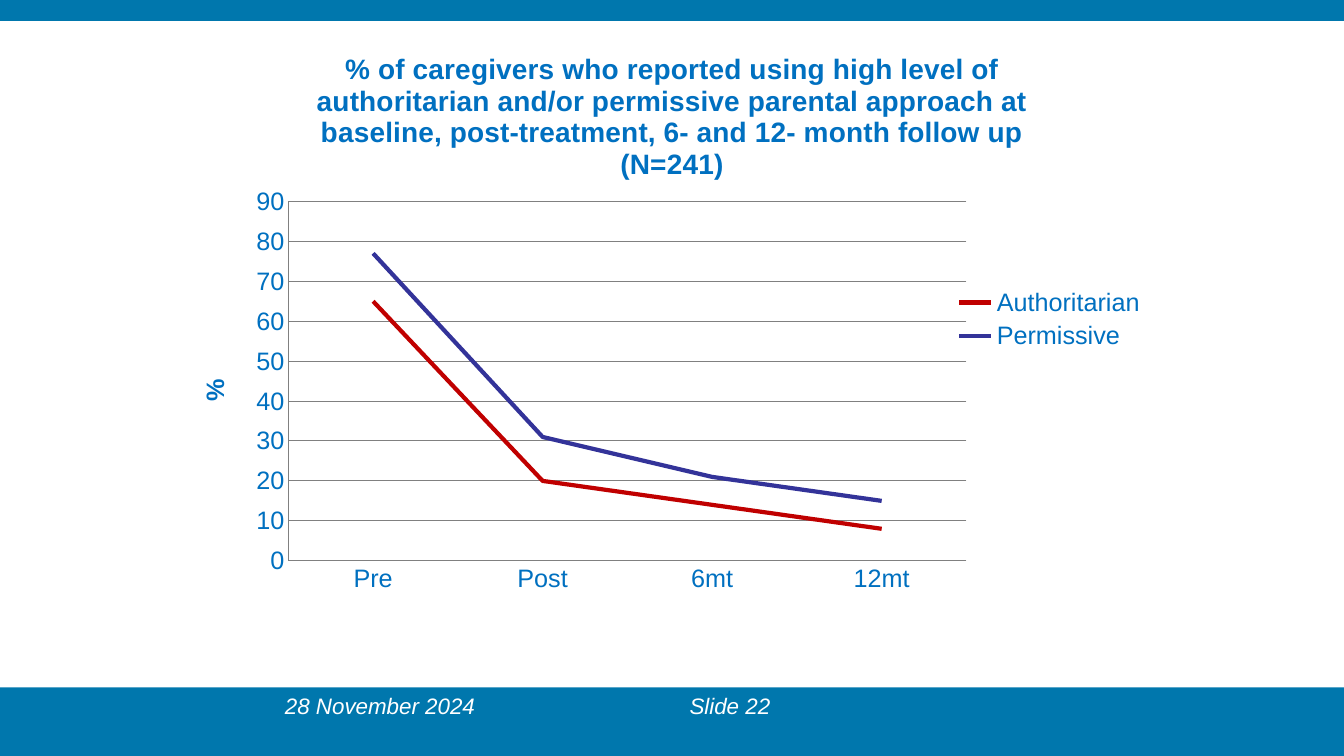
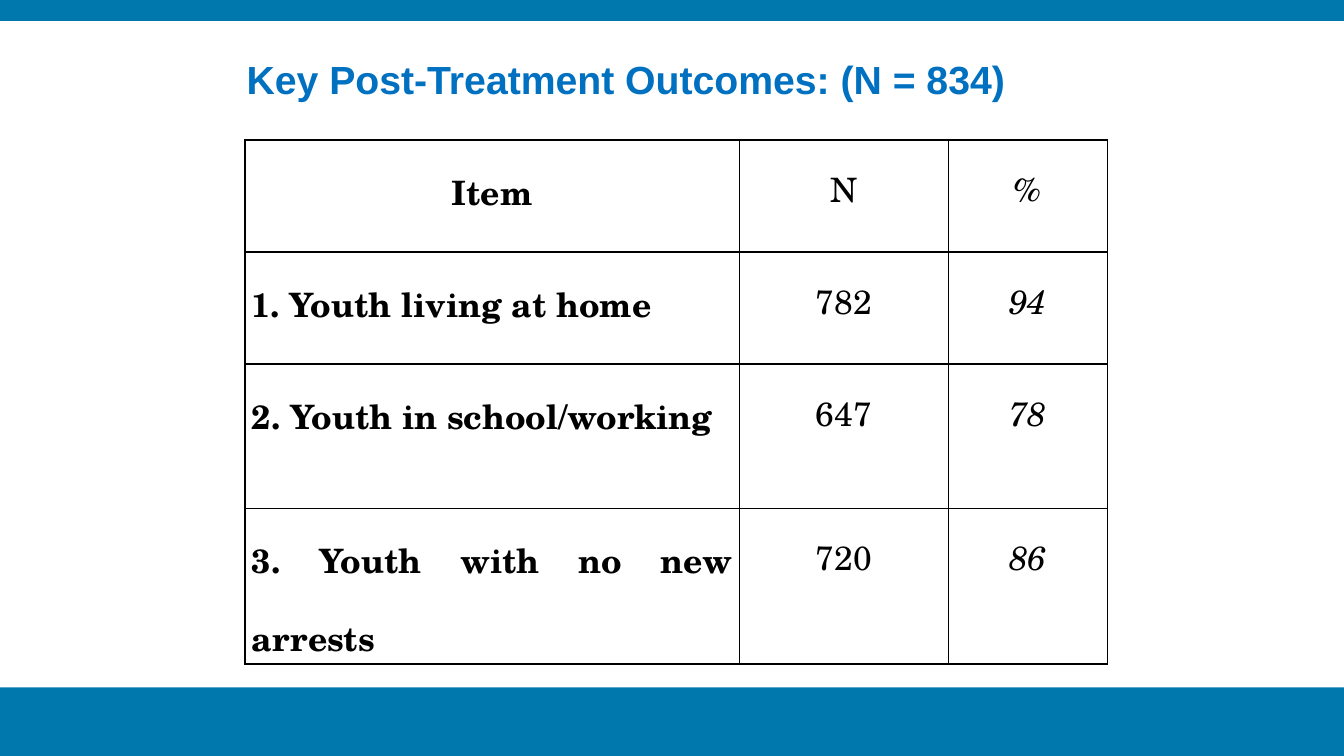
"""Build two slides on treatment outcomes: a line chart and a results table."""
from typing import NamedTuple

from lxml.etree import SubElement
from pptx import Presentation
from pptx.chart.data import CategoryChartData
from pptx.dml.color import RGBColor
from pptx.enum.chart import XL_CHART_TYPE as ChartType, XL_LEGEND_POSITION as LegendPos
from pptx.enum.chart import XL_TICK_MARK as Tick
from pptx.enum.shapes import MSO_SHAPE as Shape
from pptx.enum.text import MSO_ANCHOR as Anchor, MSO_AUTO_SIZE as AutoSize, PP_ALIGN as Align
from pptx.oxml import parse_xml
from pptx.oxml.ns import nsdecls, qn
from pptx.util import Pt

WHITE = RGBColor(0xFF, 0xFF, 0xFF)
BLACK = RGBColor(0, 0, 0)
BAND = RGBColor(0x00, 0x77, 0xAD)
BLUE = RGBColor(0x00, 0x70, 0xC0)
RED = RGBColor(0xC0, 0x00, 0x00)
INDIGO = RGBColor(0x33, 0x33, 0x99)
GREY = RGBColor(0x80, 0x80, 0x80)
SANS, SERIF = "Arial", "TeX Gyre Schola"
WIDTH, HEIGHT = 960, 540
FOOT_TOP = 491


class Box(NamedTuple):
    """Position and size in points."""
    left: float
    top: float
    width: float
    height: float

    def emu(self) -> tuple:
        """Return the four lengths for python-pptx."""
        return tuple(Pt(v) for v in self)


class Line(NamedTuple):
    """One chart series."""
    name: str
    values: tuple
    color: RGBColor


class Outcome(NamedTuple):
    """One table row with the alignment of its first cell."""
    item: str
    n: str
    percent: str
    align: Align
    height: float


BANDS = (Box(0, FOOT_TOP, WIDTH, HEIGHT - FOOT_TOP), Box(0, 0, WIDTH, 15))
FOOTERS = (("28 November 2024", Box(196.5, FOOT_TOP, 244, 37.5)),
           ("Slide 22", Box(485.5, FOOT_TOP, 108, 37.5)))
STAGES = ("Pre", "Post", "6mt", "12mt")
LINES = (Line("Authoritarian", (65, 20, 14, 8), RED),
         Line("Permissive", (77, 31, 21, 15), INDIGO))
CHART_TITLE = ("% of caregivers who reported using high level of authoritarian and/or "
               "permissive parental approach at baseline, post-treatment, "
               "6- and 12- month follow up (N=241)")
PLOT = {"x": 0.104, "y": 0.297, "w": 0.7, "h": 0.62}
COLUMNS = (353, 149.5, 113.5)
OUTCOMES = (Outcome("Item", "N", "%", Align.CENTER, 80),
            Outcome("1. Youth living at home", "782", "94", Align.JUSTIFY, 80),
            Outcome("2. Youth in school/working", "647", "78", Align.LEFT, 103),
            Outcome("3. Youth with no new arrests", "720", "86", Align.JUSTIFY, 103))


def write(tf, text: str, *, size: float, color: RGBColor = BLUE, font: str = SANS,
          bold: bool = False, italic: bool = False, align: Align = Align.LEFT,
          spacing: float = 1.0) -> None:
    """Write one formatted paragraph into a text frame."""
    p = tf.paragraphs[0]
    p.alignment, p.line_spacing = align, spacing
    r = p.add_run()
    r.text = text
    f = r.font
    f.name, f.size, f.bold, f.italic = font, Pt(size), bold, italic
    f.color.rgb = color


def add_slide(prs, layout: int):
    """Add a slide with the shared bands."""
    s = prs.slides.add_slide(prs.slide_layouts[layout])
    for box in BANDS:
        sp = s.shapes.add_shape(Shape.RECTANGLE, *box.emu())
        sp.shadow.inherit = False
        sp.fill.solid()
        sp.fill.fore_color.rgb = BAND
        sp.line.fill.background()
    return s


def add_footers(s) -> None:
    """Add the date and the slide number."""
    for text, box in FOOTERS:
        tf = s.shapes.add_textbox(*box.emu()).text_frame
        tf.word_wrap = True
        write(tf, text, size=16, color=WHITE, italic=True)


def set_title(s, text: str, box: Box) -> None:
    """Place and format the title placeholder."""
    sp = s.shapes.title
    sp.left, sp.top, sp.width, sp.height = box.emu()
    tf = sp.text_frame
    tf.auto_size, tf.word_wrap, tf.vertical_anchor = AutoSize.NONE, True, Anchor.MIDDLE
    write(tf, text, size=28, bold=True)


def place_plot(chart) -> None:
    """Fix the inner plot area as fractions of the chart."""
    area = chart.plots[0]._element.getparent()
    for old in area.findall(qn("c:layout")):
        area.remove(old)
    modes = "".join(f'<c:{k}Mode val="edge"/>' for k in "xy")
    sizes = "".join(f'<c:{k} val="{v}"/>' for k, v in PLOT.items())
    area.insert(0, parse_xml(f'<c:layout {nsdecls("c")}><c:manualLayout>'
                             f'<c:layoutTarget val="inner"/>{modes}{sizes}'
                             '</c:manualLayout></c:layout>'))


def add_line_chart(s, box: Box) -> None:
    """Add the chart of parental approaches."""
    data = CategoryChartData()
    data.categories = STAGES
    for line in LINES:
        data.add_series(line.name, line.values)
    chart = s.shapes.add_chart(ChartType.LINE, *box.emu(), data).chart
    chart.font.name, chart.font.size = SANS, Pt(18)
    chart.font.color.rgb = BLUE
    chart.has_title = True
    write(chart.chart_title.text_frame, CHART_TITLE, size=20, bold=True, align=Align.CENTER)
    chart.has_legend = True
    chart.legend.position = LegendPos.RIGHT
    chart.legend.include_in_layout = False
    for axis in (chart.category_axis, chart.value_axis):
        axis.major_tick_mark = axis.minor_tick_mark = Tick.NONE
        axis.format.line.color.rgb = GREY
    axis = chart.value_axis
    axis.minimum_scale, axis.maximum_scale, axis.major_unit = 0, 90, 10
    axis.major_gridlines.format.line.color.rgb = GREY
    write(axis.axis_title.text_frame, "%", size=18, bold=True, align=Align.CENTER)
    chart.plots[0].vary_by_categories = False
    for series, line in zip(chart.plots[0].series, LINES):
        series.smooth = False
        series.format.line.color.rgb = line.color
        series.format.line.width = Pt(3)
    place_plot(chart)


def format_cell(cell) -> None:
    """Give a cell black borders, narrow insets and no fill."""
    props = cell._tc.get_or_add_tcPr()
    for side in ("lnL", "lnR", "lnT", "lnB"):
        ln = SubElement(props, qn(f"a:{side}"), w=str(Pt(1)))
        SubElement(SubElement(ln, qn("a:solidFill")), qn("a:srgbClr"), val=str(BLACK))
    cell.fill.background()
    cell.margin_left = cell.margin_right = Pt(5)
    cell.margin_top = cell.margin_bottom = Pt(0)
    cell.vertical_anchor = Anchor.TOP


def add_outcome_table(s, left: float, top: float) -> None:
    """Add the table of outcomes."""
    box = Box(left, top, sum(COLUMNS), sum(o.height for o in OUTCOMES))
    table = s.shapes.add_table(len(OUTCOMES), len(COLUMNS), *box.emu()).table
    table.first_row = table.horz_banding = False
    for column, width in zip(table.columns, COLUMNS):
        column.width = Pt(width)
    for row, outcome in zip(table.rows, OUTCOMES):
        row.height = Pt(outcome.height)
        texts = (outcome.item, outcome.n, outcome.percent)
        for i, (cell, text) in enumerate(zip(row.cells, texts)):
            format_cell(cell)
            write(cell.text_frame, text, size=24, color=BLACK, font=SERIF, bold=i == 0,
                  italic=i == 2, align=Align.CENTER if i else outcome.align, spacing=1.5)


def main() -> None:
    """Build and save the presentation."""
    prs = Presentation()
    prs.slide_width, prs.slide_height = Pt(WIDTH), Pt(HEIGHT)
    s = add_slide(prs, 6)
    add_footers(s)
    add_line_chart(s, Box(134, 21, 692, 414))
    s = add_slide(prs, 5)
    set_title(s, "Key Post-Treatment Outcomes: (N = 834)", Box(169, 29, 621, 54))
    add_outcome_table(s, 175, 100)
    prs.save("out.pptx")


if __name__ == "__main__":
    main()
